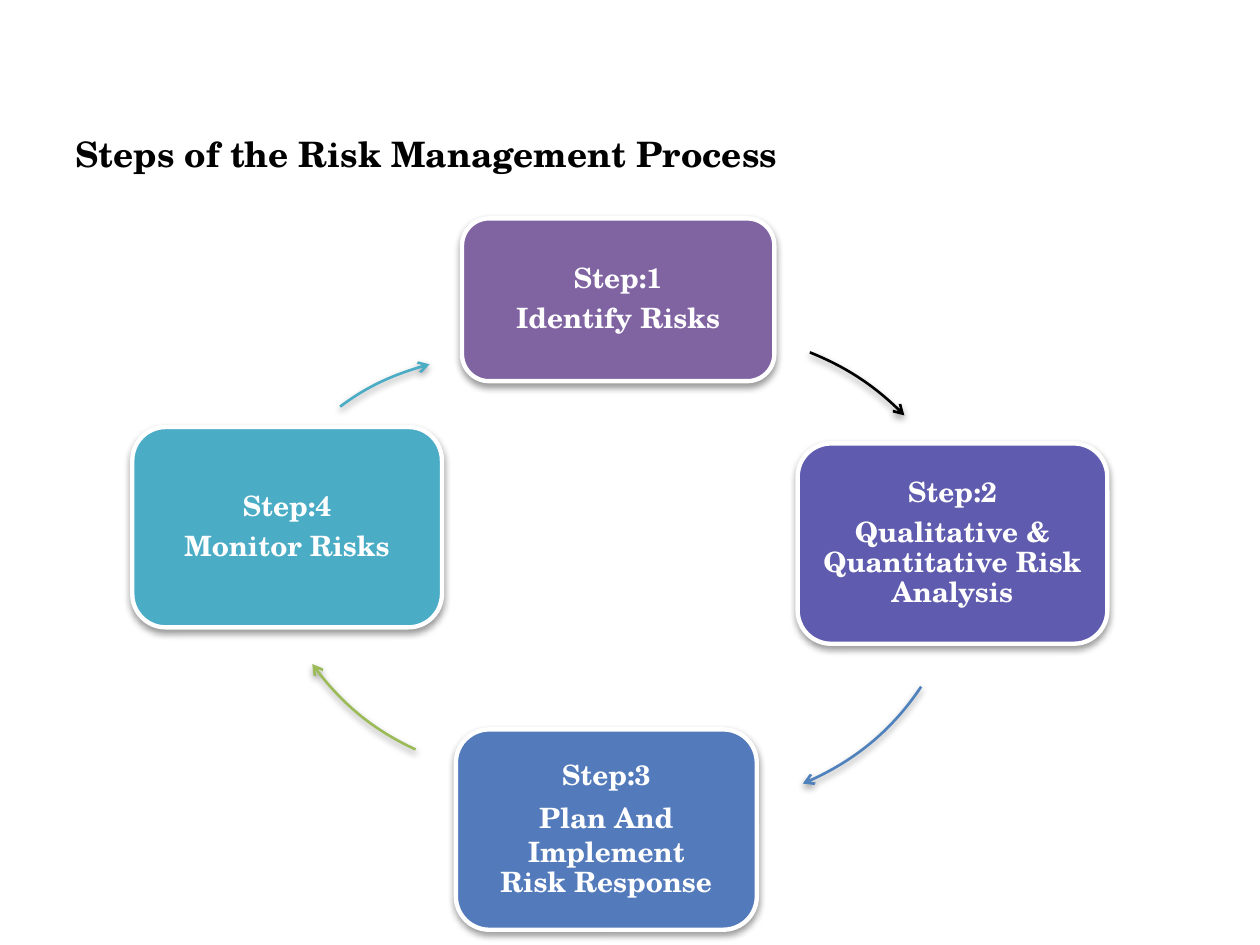
from typing import NamedTuple

from lxml.etree import SubElement
from pptx import Presentation
from pptx.dml.color import RGBColor
from pptx.enum.shapes import MSO_SHAPE
from pptx.enum.text import MSO_ANCHOR, PP_ALIGN
from pptx.oxml.ns import qn
from pptx.util import Pt

FONT = "TeX Gyre Schola"
RING = 307.5
HUES = {
    "black": "000000",
    "white": "FFFFFF",
    "purple": "8064A2",
    "violet": "5F5BAE",
    "steel": "537ABA",
    "blue": "4F81BD",
    "green": "9BBB59",
    "teal": "4BACC6",
}
TEXT = {"name": FONT, "bold": True}
FRAME = {
    "word_wrap": True,
    "vertical_anchor": MSO_ANCHOR.MIDDLE,
    "margin_left": Pt(5),
    "margin_right": Pt(5),
    "margin_top": Pt(5),
    "margin_bottom": Pt(5),
}
TIGHT = {"alignment": PP_ALIGN.CENTER, "line_spacing": 0.9, "space_after": Pt(5.6)}
LOOSE = {"alignment": PP_ALIGN.CENTER, "line_spacing": 1.0, "space_after": Pt(0)}


class Step(NamedTuple):
    left: float
    top: float
    width: float
    height: float
    hue: str
    lines: list[tuple[str, dict]]


class Curve(NamedTuple):
    left: float
    top: float
    hue: str
    start: tuple[float, float]
    bends: list[tuple[float, float]]


STEPS = [
    Step(264, 124.8, 178.5, 93, "purple",
         [("Step:1", TIGHT), ("Identify Risks", TIGHT)]),
    Step(455.8, 253.4, 177, 114.5, "violet",
         [("Step:2", TIGHT), ("Qualitative & Quantitative Risk Analysis", TIGHT)]),
    Step(260.5, 416.8, 172, 114.5, "steel",
         [("Step:3", TIGHT), ("Plan And Implement", LOOSE), ("Risk Response", TIGHT)]),
    Step(75.6, 244, 177, 114.5, "teal",
         [("Step:4", TIGHT), ("Monitor Risks", TIGHT)]),
]
CURVES = [
    Curve(253.5, 191, "black", (462.8, 201.4),
          [(483, 209.5), (502, 222), (516.8, 237.4)]),
    Curve(245.5, 152.5, "blue", (526.4, 392.4),
          [(510, 417), (486, 436.5), (458.8, 447.8)]),
    Curve(149, 135.5, "green", (237.5, 428.3),
          [(214, 417.5), (193.5, 400.5), (178.5, 379.5)]),
    Curve(130.5, 204, "teal", (194.4, 232.4),
          [(209.5, 221), (227.5, 213), (245.5, 208.2)]),
]


def tint(hue: str) -> RGBColor:
    return RGBColor.from_string(HUES[hue])


def style(item, form: dict) -> None:
    for key, value in form.items():
        setattr(item, key, value)


def set_font(font, size: float, hue: str) -> None:
    style(font, TEXT | {"size": Pt(size)})
    font.color.rgb = tint(hue)


def set_line(shape, hue: str, width: float) -> None:
    shape.line.color.rgb = tint(hue)
    shape.line.width = Pt(width)


def add_shade(shape) -> None:
    shape.shadow.inherit = False
    group = shape.element.spPr.find(qn("a:effectLst"))
    shade = SubElement(group, qn("a:outerShdw"), blurRad=str(Pt(4.1)),
                       dist=str(Pt(2)), dir="5400000", rotWithShape="0")
    color = SubElement(shade, qn("a:srgbClr"), val=HUES["black"])
    SubElement(color, qn("a:alpha"), val="40000")


def draw_step(shapes, step: Step) -> None:
    box = shapes.add_shape(MSO_SHAPE.ROUNDED_RECTANGLE, Pt(step.left), Pt(step.top),
                           Pt(step.width), Pt(step.height))
    box.fill.solid()
    box.fill.fore_color.rgb = tint(step.hue)
    set_line(box, "white", 2.5)
    add_shade(box)
    frame = box.text_frame
    style(frame, FRAME)
    for index, (words, form) in enumerate(step.lines):
        para = frame.add_paragraph() if index else frame.paragraphs[0]
        style(para, form)
        run = para.add_run()
        run.text = words
        set_font(run.font, 16, "white")


def fit_ring(arc, route, curve: Curve) -> None:
    left, top, size = Pt(curve.left), Pt(curve.top), Pt(RING)
    for point in route.iter(qn("a:pt")):
        point.set("x", str(int(point.get("x")) + arc.left - left))
        point.set("y", str(int(point.get("y")) + arc.top - top))
    route.set("w", str(size))
    route.set("h", str(size))
    style(arc, {"left": left, "top": top, "width": size, "height": size})


def draw_curve(shapes, curve: Curve) -> None:
    pen = shapes.build_freeform(*map(Pt, curve.start))
    pen.add_line_segments([(Pt(x), Pt(y)) for x, y in curve.bends], close=False)
    arc = pen.convert_to_shape()
    route = next(arc.element.iter(qn("a:moveTo"))).getparent()
    legs = route.findall(qn("a:lnTo"))
    bend = SubElement(route, qn("a:cubicBezTo"))
    for leg in legs:
        bend.append(leg[0])
        route.remove(leg)
    fit_ring(arc, route, curve)
    arc.fill.background()
    set_line(arc, curve.hue, 1.5)
    SubElement(arc.element.spPr.find(qn("a:ln")), qn("a:tailEnd"), type="arrow")
    add_shade(arc)


def main() -> None:
    deck = Presentation()
    style(deck, {"slide_width": Pt(720), "slide_height": Pt(540)})
    slide = deck.slides.add_slide(deck.slide_layouts[5])
    title = slide.shapes.title
    style(title, {"left": Pt(36), "top": Pt(72), "width": Pt(648), "height": Pt(72)})
    title.text_frame.text = "Steps of the Risk Management Process"
    title.text_frame.vertical_anchor = MSO_ANCHOR.TOP
    para = title.text_frame.paragraphs[0]
    para.alignment = PP_ALIGN.LEFT
    set_font(para.runs[0].font, 20, "black")
    for step, curve in zip(STEPS, CURVES):
        draw_step(slide.shapes, step)
        draw_curve(slide.shapes, curve)
    deck.save("out.pptx")


if __name__ == "__main__":
    main()
